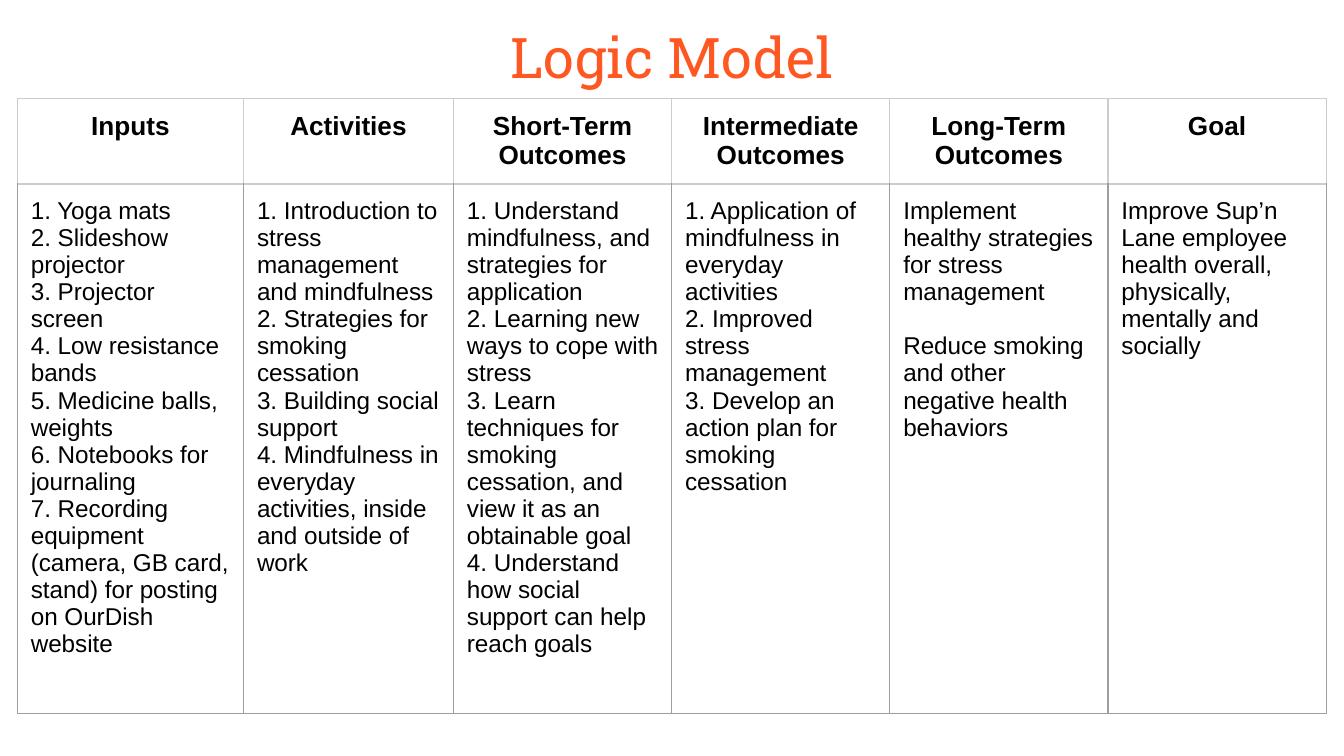
from dataclasses import dataclass

from lxml.etree import SubElement
from pptx import Presentation
from pptx.dml.color import RGBColor
from pptx.enum.text import MSO_ANCHOR, MSO_AUTO_SIZE, PP_ALIGN
from pptx.oxml.ns import qn
from pptx.slide import Slide
from pptx.table import Table, _Cell
from pptx.util import Pt

ORANGE = RGBColor(0xFF, 0x57, 0x22)
BLACK = RGBColor(0, 0, 0)
LIGHT_GREY = RGBColor(0xCC, 0xCC, 0xCC)
MID_GREY = RGBColor(0x9E, 0x9E, 0x9E)
INSET = Pt(7.2)
HEADER_HEIGHT, BODY_HEIGHT = 45.5, 283.5


@dataclass
class Column:
    heading: list[str]
    items: list[str]
    width: float = 116.9
    item_gap: float = 0


COLUMNS = [
    Column(["Inputs"], [
        "1. Yoga mats",
        "2. Slideshow projector",
        "3. Projector screen",
        "4. Low resistance bands",
        "5. Medicine balls, weights",
        "6. Notebooks for journaling",
        "7. Recording equipment (camera, GB card, stand) for posting on OurDish website",
    ], width=121.2),
    Column(["Activities"], [
        "1. Introduction to stress management and mindfulness",
        "2. Strategies for smoking cessation",
        "3. Building social support",
        "4. Mindfulness in everyday activities, inside and outside of work",
    ], width=112.5),
    Column(["Short-Term Outcomes"], [
        "1. Understand mindfulness, and strategies for application",
        "2. Learning new ways to cope with stress",
        "3. Learn techniques for smoking cessation, and view it as an obtainable goal",
        "4. Understand how social support can help reach goals",
    ]),
    Column(["Intermediate", "Outcomes"], [
        "1. Application of mindfulness in everyday activities",
        "2. Improved stress management",
        "3. Develop an action plan for smoking cessation",
    ]),
    Column(["Long-Term Outcomes"], [
        "Implement healthy strategies for stress management",
        "Reduce smoking and other negative health behaviors",
    ], item_gap=14.5),
    Column(["Goal"], [
        "Improve Sup’n Lane employee health overall, physically, mentally and socially",
    ]),
]


def add_title(s: Slide, text: str) -> None:
    sp = s.shapes.title
    sp.left, sp.top, sp.width, sp.height = Pt(24.5), Pt(5), Pt(671), Pt(39.6)
    tf = sp.text_frame
    tf.text = text
    tf.auto_size = MSO_AUTO_SIZE.NONE
    tf.vertical_anchor = MSO_ANCHOR.TOP
    tf.margin_left = tf.margin_right = tf.margin_top = tf.margin_bottom = INSET
    p = tf.paragraphs[0]
    p.alignment = PP_ALIGN.CENTER
    font = p.runs[0].font
    font.name, font.size = "Roboto Slab", Pt(30)
    font.color.rgb = ORANGE


def set_borders(cell: _Cell, sides: RGBColor, top: RGBColor) -> None:
    tc_pr = cell._tc.get_or_add_tcPr()
    edges = {"a:lnL": sides, "a:lnR": sides, "a:lnT": top, "a:lnB": sides}
    for i, (tag, color) in enumerate(edges.items()):
        ln = SubElement(tc_pr, qn(tag), w=str(Pt(0.75)))
        SubElement(SubElement(ln, qn("a:solidFill")), qn("a:srgbClr"), val=str(color))
        tc_pr.insert(i, ln)  # borders come before the fill


def fill_cell(cell: _Cell, lines: list[str], size: float, header: bool,
              gap: float = 0) -> None:
    cell.fill.background()
    cell.margin_left = cell.margin_right = INSET
    cell.margin_top = cell.margin_bottom = INSET
    cell.vertical_anchor = MSO_ANCHOR.TOP
    set_borders(cell, LIGHT_GREY if header else MID_GREY, LIGHT_GREY)
    tf = cell.text_frame
    tf.text = "\n".join(lines)
    for i, p in enumerate(tf.paragraphs):
        p.alignment = PP_ALIGN.CENTER if header else PP_ALIGN.LEFT
        p.space_before = Pt(gap if i else 0)
        font = p.runs[0].font
        font.name, font.size, font.bold = "Arial", Pt(size), header
        font.color.rgb = BLACK


def add_logic_table(s: Slide, columns: list[Column]) -> Table:
    width = sum(c.width for c in columns)
    table = s.shapes.add_table(2, len(columns), Pt(9.3), Pt(52.7), Pt(width),
                               Pt(HEADER_HEIGHT + BODY_HEIGHT)).table
    table.first_row = table.horz_banding = False
    table.rows[0].height, table.rows[1].height = Pt(HEADER_HEIGHT), Pt(BODY_HEIGHT)
    for i, column in enumerate(columns):
        table.columns[i].width = Pt(column.width)
        fill_cell(table.cell(0, i), column.heading, 14, header=True)
        fill_cell(table.cell(1, i), column.items, 13, header=False, gap=column.item_gap)
    return table


def main() -> None:
    prs = Presentation()
    prs.slide_width, prs.slide_height = Pt(720), Pt(405)
    s = prs.slides.add_slide(prs.slide_layouts[5])  # Title Only
    add_title(s, "Logic Model")
    add_logic_table(s, COLUMNS)
    prs.save("out.pptx")


if __name__ == "__main__":
    main()
